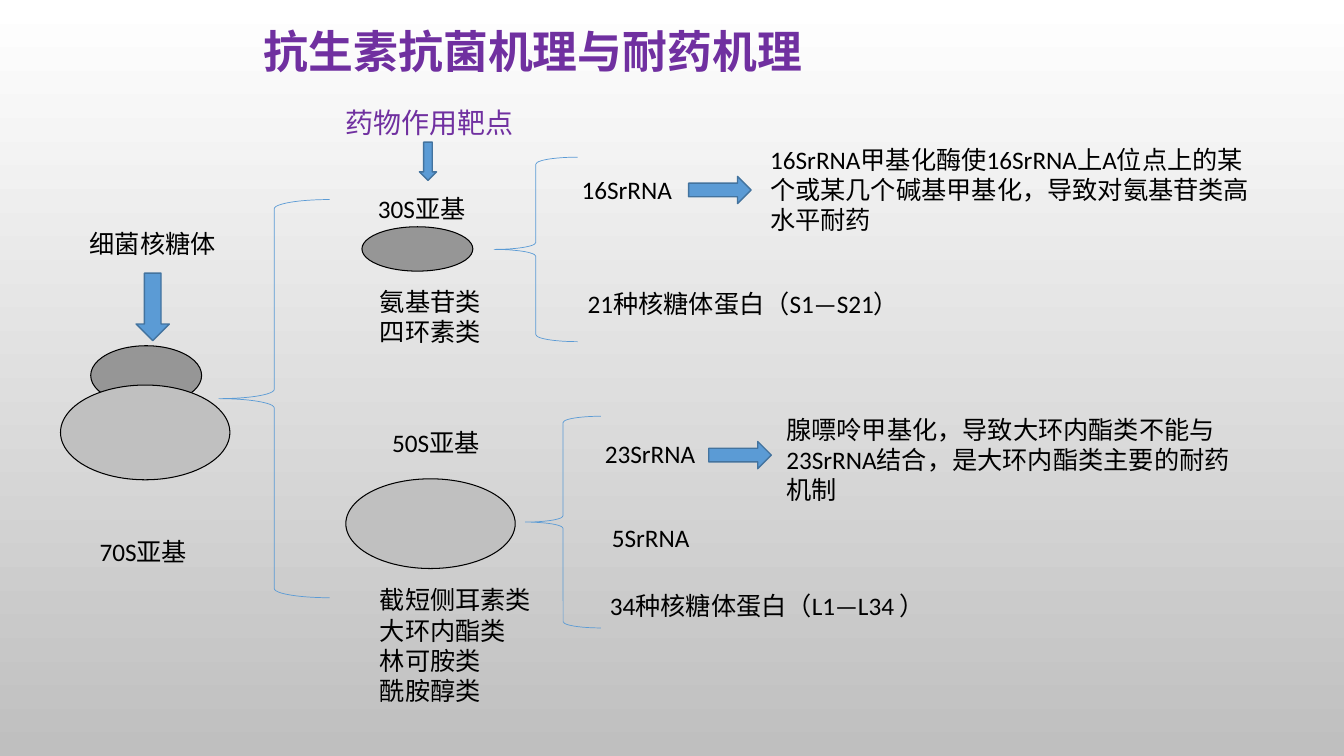
"""Build a slide on how antibiotics act and how resistance arises."""
from pptx import Presentation
from pptx.dml.color import RGBColor
from pptx.enum.shapes import MSO_SHAPE
from pptx.enum.text import MSO_AUTO_SIZE, PP_ALIGN
from pptx.util import Emu, Pt

PX = 9144
OVAL, BRACE = MSO_SHAPE.OVAL, MSO_SHAPE.LEFT_BRACE
DOWN, RIGHT = MSO_SHAPE.DOWN_ARROW, MSO_SHAPE.RIGHT_ARROW
GROW, LEFT = MSO_AUTO_SIZE.SHAPE_TO_FIT_TEXT, PP_ALIGN.LEFT

BLACK = RGBColor(0x00, 0x00, 0x00)
WHITE = RGBColor(0xFF, 0xFF, 0xFF)
SILVER = RGBColor(0xBF, 0xBF, 0xBF)
SMALL_GREY = RGBColor(0x96, 0x96, 0x96)
LARGE_GREY = RGBColor(0xC0, 0xC0, 0xC0)
BLUE = RGBColor(0x5B, 0x9B, 0xD5)
DARK_BLUE = RGBColor(0x43, 0x73, 0x9E)
PURPLE = RGBColor(0x70, 0x30, 0xA0)

BODY = {"name": "Calibri", "size": Pt(18), "bold": False}
TITLE = {**BODY, "size": Pt(32), "bold": True}
TARGET = {**BODY, "size": Pt(20)}

SUBUNITS = [
    ((90, 343, 110, 59), SMALL_GREY),
    ((60, 382, 168, 94), LARGE_GREY),
    ((359, 225, 110, 44), SMALL_GREY),
    ((343, 475, 168, 89), LARGE_GREY),
]
BRACES = [(217, 198, 110, 395), (490, 156, 83, 183), (521, 413, 75, 210)]
ARROWS = [
    (DOWN, (416, 141, 17, 38)),
    (RIGHT, (683, 175, 62, 27)),
    (RIGHT, (703, 438, 62, 27)),
    (DOWN, (135, 271, 33, 67)),
]
LABELS = [
    ((79, 222, 149, 40), ["细菌核糖体"]),
    ((89, 527, 113, 40), ["70S亚基"]),
    ((365, 187, 113, 40), ["30S亚基"]),
    ((379, 419, 113, 40), ["50S亚基"]),
    ((367, 279, 211, 71), ["氨基苷类", "四环素类"]),
    ((367, 575, 211, 131), ["截短侧耳素类", "大环内酯类", "林可胺类", "酰胺醇类"]),
    ((567, 168, 211, 40), ["16SrRNA"]),
    ((573, 281, 352, 40), ["21种核糖体蛋白（S1—S21）"]),
    ((590, 430, 211, 40), ["23SrRNA"]),
    ((597, 513, 211, 40), ["5SrRNA"]),
    ((595, 581, 375, 40), ["34种核糖体蛋白（L1—L34 ）"]),
    ((754, 138, 498, 101),
     ["16SrRNA甲基化酶使16SrRNA上A位点上的某个或某几个碱基甲基化，导致对氨基苷类高水平耐药"]),
    ((770, 406, 462, 101),
     ["腺嘌呤甲基化，导致大环内酯类不能与23SrRNA结合，是大环内酯类主要的耐药机制"]),
]


def emu(box):
    """Turn px lengths into EMU."""
    return [Emu(v * PX) for v in box]


def set_background(s):
    """Fade the background from silver at the bottom to white at the top."""
    fill = s.background.fill
    fill.gradient()
    fill.gradient_angle = 90
    for stop, color in zip(fill.gradient_stops, (SILVER, WHITE)):
        stop.color.rgb = color


def add_figure(s, kind, box, fill, line, width):
    """Add a preset shape, unfilled when fill is None."""
    sp = s.shapes.add_shape(kind, *emu(box))
    sp.shadow.inherit = False
    if fill is None:
        sp.fill.background()
    else:
        sp.fill.solid()
        sp.fill.fore_color.rgb = fill
    sp.line.color.rgb = line
    sp.line.width = Pt(width)


def add_text(s, box, lines, fmt=BODY, color=BLACK, wrap=True):
    """Add a text box with one paragraph per line."""
    tf = s.shapes.add_textbox(*emu(box)).text_frame
    tf.word_wrap = wrap
    tf.auto_size = GROW
    for i, line in enumerate(lines):
        p = tf.paragraphs[0] if i == 0 else tf.add_paragraph()
        p.alignment = LEFT
        r = p.add_run()
        r.text = line
        for key, value in fmt.items():
            setattr(r.font, key, value)
        r.font.color.rgb = color


def main():
    """Build and save the slide."""
    prs = Presentation()
    prs.slide_width, prs.slide_height = emu((1333, 750))
    s = prs.slides.add_slide(prs.slide_layouts[6])
    set_background(s)
    for box, fill in SUBUNITS:
        add_figure(s, OVAL, box, fill, BLACK, 0.75)
    for box in BRACES:
        add_figure(s, BRACE, box, None, BLUE, 0.5)
    for kind, box in ARROWS:
        add_figure(s, kind, box, BLUE, DARK_BLUE, 1)
    add_text(s, (252, 19, 806, 64), ["抗生素抗菌机理与耐药机理"], TITLE, PURPLE)
    add_text(s, (333, 100, 190, 44), ["药物作用靶点"], TARGET, PURPLE, wrap=False)
    for box, lines in LABELS:
        add_text(s, box, lines)
    prs.save("out.pptx")


if __name__ == "__main__":
    main()
